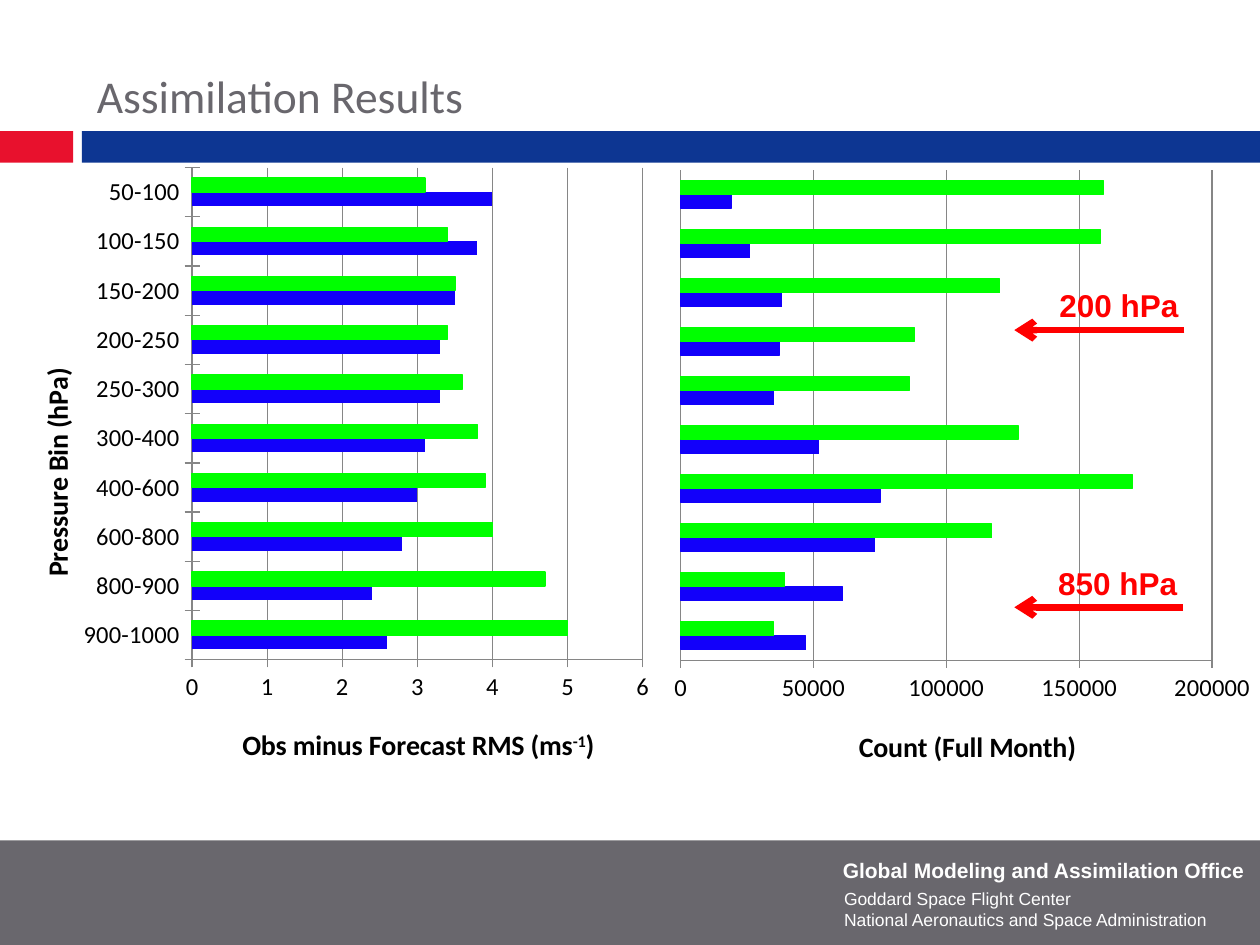
from dataclasses import dataclass, field

from lxml.etree import SubElement
from pptx import Presentation
from pptx.chart.data import CategoryChartData
from pptx.dml.color import RGBColor
from pptx.enum.chart import XL_CHART_TYPE, XL_TICK_MARK
from pptx.enum.shapes import MSO_CONNECTOR, MSO_SHAPE
from pptx.enum.text import MSO_ANCHOR
from pptx.oxml import parse_xml
from pptx.oxml.ns import nsdecls, qn
from pptx.slide import Slide
from pptx.util import Inches, Pt


def color(hex_code):
    return RGBColor.from_string(hex_code)


def apply(target, values):
    for name, value in values.items():
        setattr(target, name, value)


def manual_layout(**fractions):
    parts = "".join(f'<c:{key} val="{value}"/>' for key, value in fractions.items())
    return parse_xml(f'<c:layout {nsdecls("c")}><c:manualLayout>{parts}</c:manualLayout></c:layout>')


@dataclass
class SlideBuilder:
    """Draws styled elements on the current slide."""

    slide: Slide
    gray: str = "69676D"
    red: str = "FF0000"
    grid: str = "868686"
    series_colors: tuple = ("1200FA", "00FF00")
    tick_font: dict = field(default_factory=lambda: {"size": Pt(14), "bold": False, "name": "Calibri"})
    title_font: dict = field(default_factory=lambda: {"size": Pt(16), "bold": True, "name": "Calibri"})

    def band(self, left, top, width, height, fill):
        band = self.slide.shapes.add_shape(
            MSO_SHAPE.RECTANGLE, Inches(left), Inches(top), Inches(width), Inches(height))
        band.shadow.inherit = False
        band.fill.solid()
        band.fill.fore_color.rgb = color(fill)
        band.line.fill.background()

    def text(self, left, top, width, height, words, size, hex_code,
             name="Arial", bold=False, anchor=MSO_ANCHOR.TOP):
        box = self.slide.shapes.add_textbox(
            Inches(left), Inches(top), Inches(width), Inches(height))
        apply(box.text_frame, {"word_wrap": True, "vertical_anchor": anchor})
        paragraph = box.text_frame.paragraphs[0]
        paragraph.text = words
        for run in paragraph.runs:
            apply(run.font, {"size": Pt(size), "name": name, "bold": bold})
            run.font.color.rgb = color(hex_code)

    def pressure_level(self, label, label_left, label_top, arrow_right, arrow_y):
        arrow = self.slide.shapes.add_connector(
            MSO_CONNECTOR.STRAIGHT, Inches(arrow_right), Inches(arrow_y), Inches(8.05), Inches(arrow_y))
        arrow.line.width = Pt(3.75)
        arrow.line.color.rgb = color(self.red)
        SubElement(arrow.line._get_or_add_ln(), qn("a:tailEnd"), type="arrow")
        SubElement(arrow._element.spPr, qn("a:effectLst"))
        self.text(label_left, label_top, 1.43, 0.4, label, 18, self.red, bold=True)

    def axis_title(self, axis, words, x, y, superscript=None):
        paragraph = axis.axis_title.text_frame.paragraphs[0]
        for part in words:
            run = paragraph.add_run()
            run.text = part
            apply(run.font, self.title_font)
            run.font.color.rgb = color("000000")
            if part == superscript:
                run._r.get_or_add_rPr().set("baseline", "30000")
        title = axis.axis_title._element
        for layout in title.findall(qn("c:layout")):
            title.remove(layout)
        title.find(qn("c:tx")).addnext(manual_layout(xMode="edge", yMode="edge", x=x, y=y))

    def axis_style(self, axis):
        apply(axis, {"major_tick_mark": XL_TICK_MARK.CROSS, "minor_tick_mark": XL_TICK_MARK.NONE})
        apply(axis.tick_labels.font, self.tick_font)
        axis.tick_labels.font.color.rgb = color("000000")
        axis.format.line.color.rgb = color(self.grid)

    def bar_chart(self, left, top, width, height, categories, series, outlined,
                  maximum, step, plot_x, plot_width):
        data = CategoryChartData()
        data.categories = categories
        for number, values in enumerate(series, 1):
            data.add_series(f"Series {number}", values)
        chart = self.slide.shapes.add_chart(
            XL_CHART_TYPE.BAR_CLUSTERED, Inches(left), Inches(top), Inches(width), Inches(height), data).chart
        apply(chart, {"has_legend": False, "has_title": False})
        apply(chart.font, {"size": Pt(10), "name": "Calibri"})
        chart.font.color.rgb = color("000000")
        plot = chart.plots[0]
        apply(plot, {"gap_width": 150, "overlap": 0, "vary_by_categories": False})
        for bars, hex_code, has_line in zip(plot.series, self.series_colors, outlined):
            bars.format.fill.solid()
            bars.format.fill.fore_color.rgb = color(hex_code)
            if has_line:
                bars.format.line.color.rgb = color(hex_code)
                bars.format.line.width = Pt(0.75)
        value_axis = chart.value_axis
        apply(value_axis, {"minimum_scale": 0, "maximum_scale": maximum,
                           "major_unit": step, "has_major_gridlines": True})
        value_axis.major_gridlines.format.line.color.rgb = color(self.grid)
        apply(value_axis.tick_labels, {"number_format": "General", "number_format_is_linked": False})
        self.axis_style(value_axis)
        self.axis_style(chart.category_axis)
        plot_area = chart._chartSpace.chart.plotArea
        for layout in plot_area.findall(qn("c:layout")):
            plot_area.remove(layout)
        plot_area.insert(0, manual_layout(
            layoutTarget="inner", xMode="edge", yMode="edge", x=plot_x, y=0.02, w=plot_width, h=0.78))
        return chart


def main():
    deck = Presentation()
    apply(deck, {"slide_width": Inches(10), "slide_height": Inches(7.5)})
    builder = SlideBuilder(deck.slides.add_slide(deck.slide_layouts[6]))

    builder.band(0, 6.67, 10, 0.83, builder.gray)
    builder.band(0, 0.98, 10, 0.35, "FFFFFF")
    builder.band(0, 1.04, 0.58, 0.25, "E8112D")
    builder.band(0.65, 1.04, 9.35, 0.25, "0D3692")
    builder.text(6.59, 6.76, 3.41, 0.3, "Global Modeling and Assimilation Office", 12, "FFFFFF", bold=True)
    builder.text(6.6, 7, 3.18, 0.43,
                 "Goddard Space Flight Center\vNational Aeronautics and Space Administration", 10, "FFFFFF")
    builder.text(0.67, 0.02, 9.33, 1, "Assimilation Results", 26, builder.gray,
                 name="Calibri", anchor=MSO_ANCHOR.BOTTOM)

    pressure_bins = ["900-1000", "800-900", "600-800", "400-600", "300-400",
                     "250-300", "200-250", "150-200", "100-150", "50-100"]
    rms = [(2.6, 2.4, 2.8, 3, 3.1, 3.3, 3.3, 3.5, 3.8, 4),
           (5, 4.7, 4, 3.9, 3.8, 3.6, 3.4, 3.5, 3.4, 3.1)]
    rms_chart = builder.bar_chart(0, 1.23, 5.26, 5.01, pressure_bins, rms, (False, True),
                                  maximum=6, step=1, plot_x=0.29, plot_width=0.68)
    builder.axis_title(rms_chart.category_axis, ["Pressure Bin (hPa)"], 0.05, 0.33)
    builder.axis_title(rms_chart.value_axis, ["Obs minus Forecast RMS (ms", "-1", ")"], 0.36, 0.9,
                       superscript="-1")

    counts = [(47000, 61000, 73000, 75000, 52000, 35000, 37000, 38000, 26000, 19000),
              (35000, 39000, 117000, 170000, 127000, 86000, 88000, 120000, 158000, 159000)]
    count_chart = builder.bar_chart(5.26, 1.25, 4.74, 4.99, [str(n) for n in range(1, 11)], counts,
                                    (True, True), maximum=200000, step=50000, plot_x=0.03, plot_width=0.89)
    count_chart.category_axis.visible = False
    builder.axis_title(count_chart.value_axis, ["Count (Full Month)"], 0.32, 0.9)

    builder.pressure_level("200 hPa", 8.31, 2.22, 9.4, 2.62)
    builder.pressure_level("850 hPa", 8.3, 4.43, 9.39, 4.82)
    deck.save("out.pptx")


if __name__ == "__main__":
    main()
